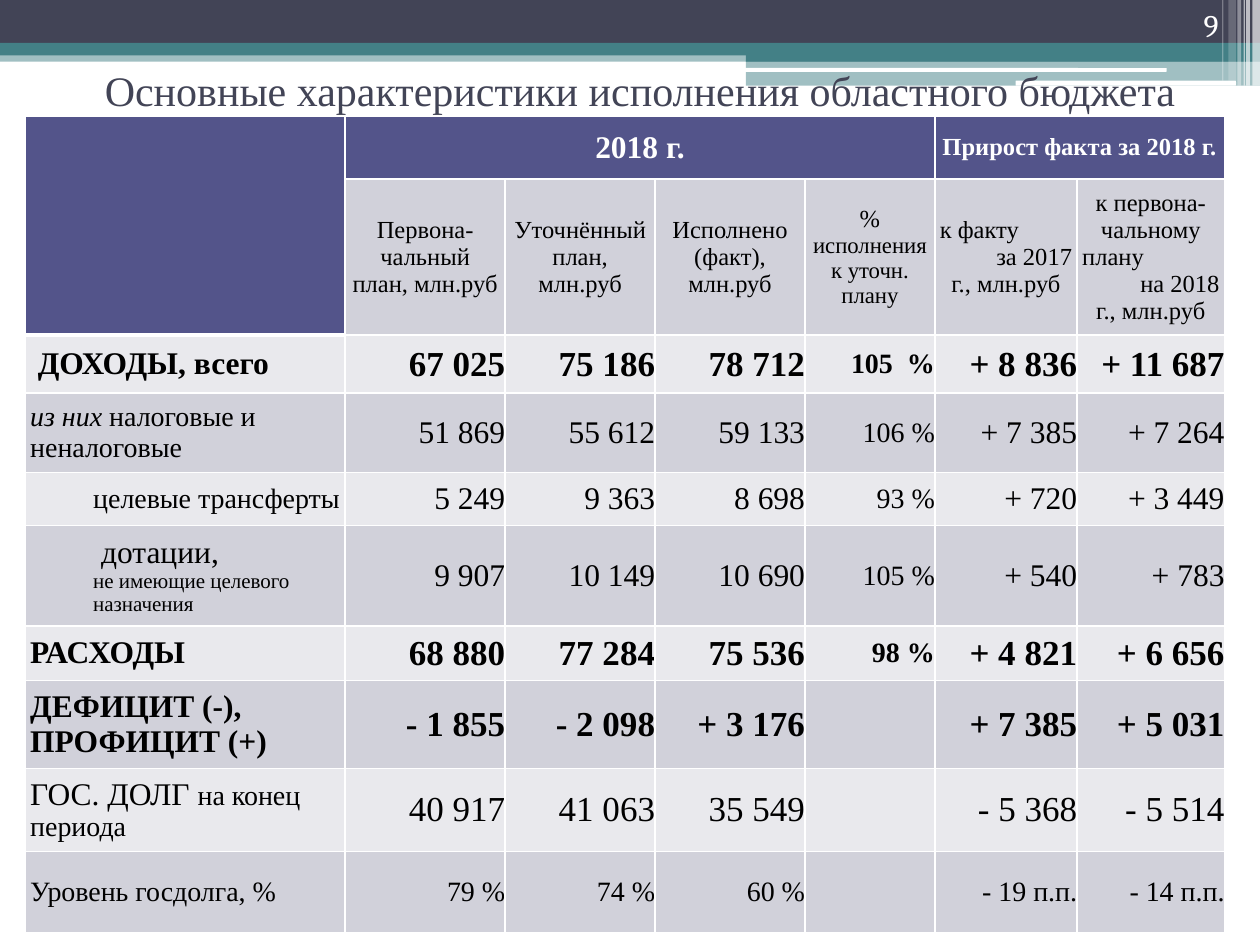
from lxml.etree import SubElement
from pptx import Presentation
from pptx.dml.color import RGBColor
from pptx.enum.shapes import MSO_SHAPE
from pptx.enum.text import MSO_ANCHOR, PP_ALIGN
from pptx.oxml.ns import qn
from pptx.util import Inches, Pt

SERIF = "Times New Roman"
DARK, TEAL, WHITE, BLACK = "424456", "438086", "FFFFFF", "000000"
HEADER, BANDS = "53548A", ("E9E9ED", "D1D1DA")
LEFT, CENTER, RIGHT = PP_ALIGN.LEFT, PP_ALIGN.CENTER, PP_ALIGN.RIGHT

COLUMN_WIDTHS = [2.54, 1.27, 1.19, 1.19, 1.03, 1.13, 1.17]
ROW_HEIGHTS = [0.5, 1.24, 0.46, 0.63, 0.42, 0.8, 0.43, 0.7, 0.66, 0.64]
PERCENT_COLUMN = 4

SUBHEADERS = [
    [(CENTER, [("Первона-чальный план, млн.руб", 14)])],
    [(CENTER, [("Уточнённый план, млн.руб", 14)])],
    [(CENTER, [("Исполнено (факт), млн.руб", 14)])],
    [(CENTER, [("% ", 14), ("исполнения к уточн. плану", 13)])],
    [(LEFT, [("к факту", 14)]), (RIGHT, [("за 2017", 14)]),
     (CENTER, [("г., млн.руб", 14)])],
    [(CENTER, [("к первона-чальному", 14)]), (LEFT, [("плану", 14)]),
     (RIGHT, [("на 2018", 14)]), (CENTER, [("г., млн.руб", 14)])],
]

# label paragraphs, label inset, label indent, value size, bold values, values
BUDGET_ROWS = [
    ([[("ДОХОДЫ, всего", 18, True)]], 0.1, 0, 20, True,
     ["67 025", "75 186", "78 712", "105  %", "+ 8 836", "+ 11 687"]),
    ([[("из них", 16, False, True), (" налоговые и неналоговые", 16)]], 0.04, 0, 18, False,
     ["51 869", "55 612", "59 133", "106 %", "+ 7 385", "+ 7 264"]),
    ([[("целевые трансферты", 16)]], 0.04, 0.5, 18, False,
     ["5 249", "9 363", "8 698", "93 %", "+ 720", "+ 3 449"]),
    ([[(" дотации,", 18)], [("не имеющие целевого назначения", 12)]], 0.04, 0.5, 18, False,
     ["9 907", "10 149", "10 690", "105 %", "+ 540", "+ 783"]),
    ([[("РАСХОДЫ", 18, True)]], 0.04, 0, 20, True,
     ["68 880", "77 284", "75 536", "98 %", "+ 4 821", "+ 6 656"]),
    ([[("ДЕФИЦИТ (-), ПРОФИЦИТ (+)", 18, True)]], 0.04, 0, 20, True,
     ["- 1 855", "- 2 098", "+ 3 176", "", "+ 7 385", "+ 5 031"]),
    ([[("ГОС. ДОЛГ ", 18), ("на конец периода", 16)]], 0.04, 0, 20, False,
     ["40 917", "41 063", "35 549", "", "- 5 368", "- 5 514"]),
    ([[("Уровень госдолга, %", 16)]], 0.04, 0, 16, False,
     ["79 %", "74 %", "60 %", "", "- 19 п.п.", "- 14 п.п."]),
]


def color(value):
    return RGBColor.from_string(value)


def add_run(paragraph, text, size, bold=False, italic=False, ink=BLACK, font=SERIF):
    run = paragraph.add_run()
    run.text = text
    run.font.name = font
    run.font.size = Pt(size)
    run.font.bold = bold
    run.font.italic = italic
    run.font.color.rgb = color(ink)


def add_bar(slide, left, top, width, height, fill, opacity=100, kind=MSO_SHAPE.RECTANGLE):
    shape = slide.shapes.add_shape(
        kind, Inches(left), Inches(top), Inches(width), Inches(height))
    shape.shadow.inherit = False
    shape.fill.solid()
    shape.fill.fore_color.rgb = color(fill)
    shape.line.fill.background()
    if opacity < 100:
        fill_color = shape.element.spPr.find(qn("a:solidFill")).find(qn("a:srgbClr"))
        SubElement(fill_color, qn("a:alpha"), val=str(opacity * 1000))


def add_banner(slide, left, top, width):
    right = left + width
    add_bar(slide, left, top + 0.4, width, 0.09, TEAL, 50)
    add_bar(slide, left, top, width, 0.34, DARK)
    add_bar(slide, left, top + 0.34, width, 0.1, TEAL)
    add_bar(slide, right - 4.08, top + 0.39, 4.08, 0.1, TEAL)
    add_bar(slide, right - 4.08, top + 0.48, 4.08, 0.2, TEAL, 50)
    for offset, bar_top, bar_width, height in [(4.09, 0.54, 3.35, 0.03),
                                               (1.94, 0.64, 1.75, 0.04)]:
        add_bar(slide, right - offset, top + bar_top, bar_width, height, WHITE,
                kind=MSO_SHAPE.ROUNDED_RECTANGLE)
    for offset, stripe_width, height, opacity in [
            (0.06, 0.06, 0.68, 65), (0.11, 0.03, 0.68, 65), (0.13, 0.01, 0.68, 60),
            (0.18, 0.03, 0.68, 40), (0.25, 0.06, 0.64, 20), (0.3, 0.01, 0.64, 30)]:
        add_bar(slide, right - offset, top, stripe_width, height, WHITE, opacity)


def place_title(slide, left, top, width, height):
    title = slide.shapes.title
    title.left, title.top = Inches(left), Inches(top)
    title.width, title.height = Inches(width), Inches(height)
    title.text_frame.vertical_anchor = MSO_ANCHOR.MIDDLE
    paragraph = title.text_frame.paragraphs[0]
    paragraph.alignment = CENTER
    add_run(paragraph, "Основные характеристики исполнения областного бюджета", 24, ink=DARK)
    slide.shapes.element.append(title.element)


def add_page_number(slide, left, top, width, height):
    box = slide.shapes.add_textbox(Inches(left), Inches(top), Inches(width), Inches(height))
    box.text_frame.word_wrap = True
    box.text_frame.vertical_anchor = MSO_ANCHOR.BOTTOM
    paragraph = box.text_frame.paragraphs[0]
    paragraph.alignment = RIGHT
    add_run(paragraph, "9", 18, ink=WHITE, font="Cambria")


def style_cell(cell, fill, bottom_width=1):
    properties = cell._tc.get_or_add_tcPr()
    for side, width in (("L", 1), ("R", 1), ("T", 1), ("B", bottom_width)):
        line = SubElement(properties, qn(f"a:ln{side}"), w=str(Pt(width)))
        SubElement(SubElement(line, qn("a:solidFill")), qn("a:srgbClr"), val=WHITE)
    cell.fill.solid()
    cell.fill.fore_color.rgb = color(fill)


def fill_cell(cell, paragraphs, insets, ink=BLACK, indent=0):
    cell.vertical_anchor = MSO_ANCHOR.MIDDLE
    (cell.margin_left, cell.margin_top,
     cell.margin_right, cell.margin_bottom) = [Inches(inset) for inset in insets]
    for index, (alignment, runs) in enumerate(paragraphs):
        frame = cell.text_frame
        paragraph = frame.add_paragraph() if index else frame.paragraphs[0]
        paragraph.alignment = alignment
        if indent:
            paragraph._p.get_or_add_pPr().set("marL", str(Inches(indent)))
        for run in runs:
            add_run(paragraph, *run, ink=ink)


def fill_header(table):
    insets = [0.04] * 4
    for column in range(len(COLUMN_WIDTHS)):
        style_cell(table.cell(0, column), HEADER, 1 if column else 3)
        style_cell(table.cell(1, column), BANDS[1] if column else HEADER, 1 if column else 3)
    table.cell(0, 0).merge(table.cell(1, 0))
    for first, last, text, size in [(1, 4, "2018 г.", 18),
                                    (5, 6, "Прирост факта за 2018 г.", 14)]:
        table.cell(0, first).merge(table.cell(0, last))
        fill_cell(table.cell(0, first), [(CENTER, [(text, size, True)])], insets, WHITE)
    for column, paragraphs in enumerate(SUBHEADERS, 1):
        fill_cell(table.cell(1, column), paragraphs, insets)


def fill_budget_row(table, row, label, label_inset, indent, size, bold, values):
    margin = 0.04 if indent and len(label) == 1 else 0.05
    for column in range(len(COLUMN_WIDTHS)):
        style_cell(table.cell(row, column), BANDS[row % 2])
    fill_cell(table.cell(row, 0), [(LEFT, runs) for runs in label],
              (label_inset, margin, 0, margin), indent=indent)
    for column, value in enumerate(values, 1):
        if value:
            value_size = 16 if column == PERCENT_COLUMN else size
            fill_cell(table.cell(row, column), [(RIGHT, [(value, value_size, bold)])],
                      (0.1, margin, 0, margin))


def add_budget_table(slide, left, top):
    table = slide.shapes.add_table(
        len(ROW_HEIGHTS), len(COLUMN_WIDTHS), Inches(left), Inches(top),
        Inches(sum(COLUMN_WIDTHS)), Inches(sum(ROW_HEIGHTS))).table
    table.first_row = table.horz_banding = False
    for column, width in zip(table.columns, COLUMN_WIDTHS):
        column.width = Inches(width)
    for row, height in zip(table.rows, ROW_HEIGHTS):
        row.height = Inches(height)
    fill_header(table)
    for row, content in enumerate(BUDGET_ROWS, 2):
        fill_budget_row(table, row, *content)


def main():
    presentation = Presentation()
    presentation.slide_width, presentation.slide_height = Inches(10), Inches(7.5)
    slide = presentation.slides.add_slide(presentation.slide_layouts[5])
    add_banner(slide, 0, 0, 10)
    place_title(slide, 0, 0.39, 10.16, 0.65)
    add_budget_table(slide, 0.2, 0.92)
    add_page_number(slide, 8.94, 0, 0.83, 0.4)
    presentation.save("out.pptx")


if __name__ == "__main__":
    main()
